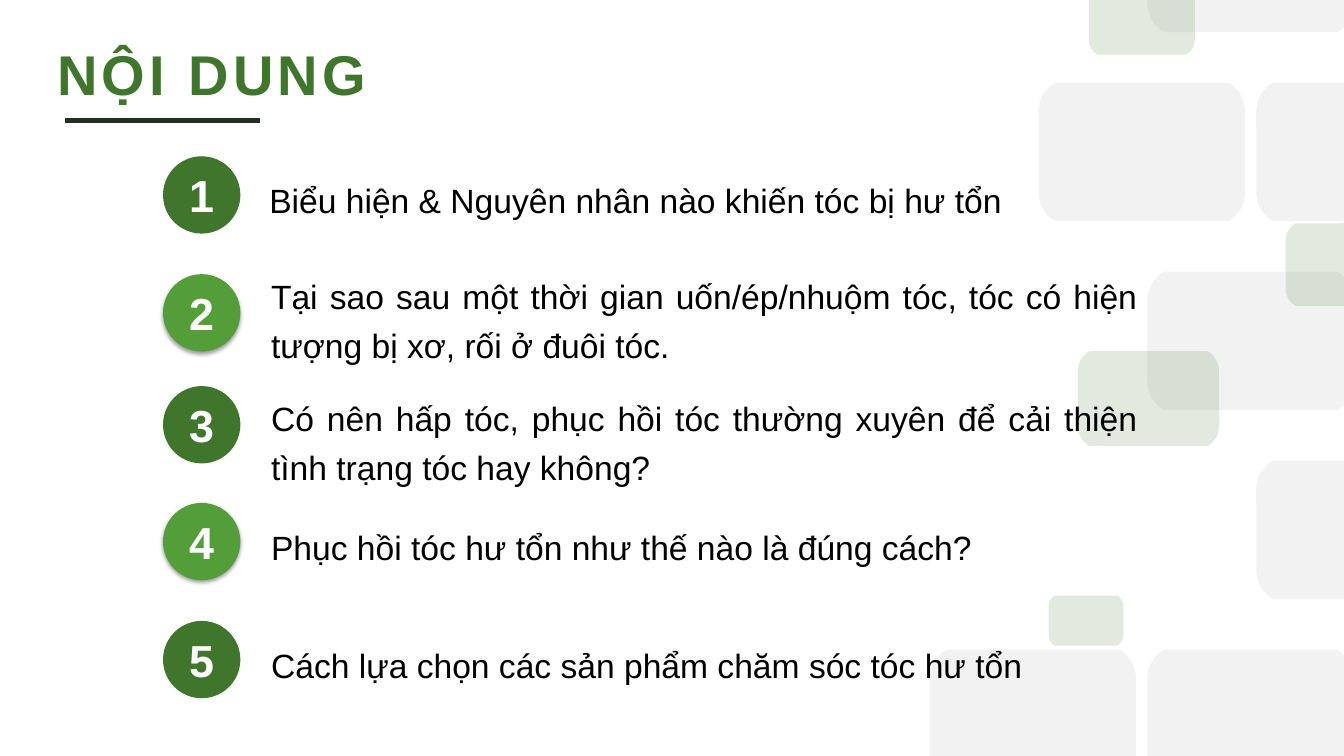
import math

import pptx
import pptx.util
import pptx.dml.color
import pptx.enum.shapes
import pptx.enum.text
import pptx.oxml
import pptx.oxml.ns
from lxml import etree

COLORS = {"dark": "3F762B", "light": "549E39", "rule": "223028",
          "pale": "F2F2F2", "white": "FFFFFF", "black": "000000"}
RGB = {name: pptx.dml.color.RGBColor.from_string(c) for name, c in COLORS.items()}
qn = pptx.oxml.ns.qn

prs = pptx.Presentation()
prs.slide_width = pptx.util.Inches(13.33)
prs.slide_height = pptx.util.Inches(7.5)
W, H = prs.slide_width / 100, prs.slide_height / 100  # one percent of the slide
s = prs.slides.add_slide(prs.slide_layouts[5])


def add_hexagon(cx, cy, width, color, opacity=100):
    """Rounded hexagon from a centre and width in percent, cut at top and bottom."""
    size = width * W
    left, right = cx * W - size / 2, cx * W + size / 2
    top = max(cy * H - 0.553 * size, 0)
    bottom = min(cy * H + 0.553 * size, 100 * H)
    builder = s.shapes.build_freeform(round(left), round(top))
    builder.add_line_segments([(round(right), round(top)), (round(right), round(bottom)),
                               (round(left), round(bottom))])
    sp = builder.convert_to_shape()
    outline = sp.element.spPr.find(".//" + qn("a:path"))
    for step in list(outline):
        outline.remove(step)

    # One Bezier corner, turned six times; corners beyond the edge become straight cuts
    corner = [(0.5, -0.195), (0.5, -0.255), (0.471, -0.306), (0.419, -0.336)]
    steps = []
    for side in range(6):
        a = -math.radians(60 * side)
        turned = [(cx * W + size * (x * math.cos(a) - y * math.sin(a)),
                   cy * H + size * (x * math.sin(a) + y * math.cos(a))) for x, y in corner]
        if all(top <= y <= bottom for x, y in turned):
            steps += [("lnTo", turned[:1]), ("cubicBezTo", turned[1:])]
        elif side not in (1, 4):
            edge = top if side < 3 else bottom
            steps.append(("lnTo", [(right if side in (0, 5) else left, edge)]))
    steps[0] = ("moveTo", steps[0][1])
    for tag, points in steps:
        step = etree.SubElement(outline, qn("a:" + tag))
        for x, y in points:
            etree.SubElement(step, qn("a:pt"), x=str(round(x - left)), y=str(round(y - top)))
    etree.SubElement(outline, qn("a:close"))

    sp.shadow.inherit = False
    sp.line.fill.background()
    sp.fill.solid()
    sp.fill.fore_color.rgb = RGB[color]
    if opacity < 100:
        clr = sp.element.spPr.find(qn("a:solidFill")).find(qn("a:srgbClr"))
        etree.SubElement(clr, qn("a:alpha"), val=str(opacity * 1000))


def write(sp, text, size, color, bold=False, align="LEFT", spacing=None):
    """Put one formatted run into a text shape that grows with its text."""
    tf = sp.text_frame
    tf.word_wrap = True
    tf.auto_size = pptx.enum.text.MSO_AUTO_SIZE.SHAPE_TO_FIT_TEXT
    tf.vertical_anchor = pptx.enum.text.MSO_ANCHOR.TOP
    p = tf.paragraphs[0]
    p.alignment = pptx.enum.text.PP_ALIGN[align]
    p.line_spacing = spacing
    r = p.add_run()
    r.text = text
    r.font.name = "Arial"
    r.font.size = pptx.util.Pt(size)
    r.font.bold = bold
    r.font.color.rgb = RGB[color]
    return r


# Honeycomb: grey cells on a staggered grid, green cells on top
for col, row in [(0, 4), (2, 4), (3, 1), (2, 0), (2, 2), (1, 1), (3, 3)]:
    add_hexagon(76.85 + 8.1 * col, 25 * row - 4.9, 15.35, "pale")
for cx, cy, width in [(100.23, 35, 9.15), (80.8, 82.1, 5.55),
                      (84.96, 2.53, 7.88), (85.45, 52.73, 10.5)]:
    add_hexagon(cx, cy, width, "dark", 15)

# Title and its rule
title = s.shapes.title
title.left, title.top = round(3.5 * W), round(4.53 * H)
title.width, title.height = round(64.74 * W), round(10.27 * H)
r = write(title, "NỘI DUNG", 40, "dark", True)
r.font._element.set("spc", "300")

rule = s.shapes.add_connector(pptx.enum.shapes.MSO_CONNECTOR.STRAIGHT, round(4.85 * W),
                              round(15.93 * H), round(19.35 * W), round(15.93 * H))
rule.line.color.rgb = RGB["rule"]
rule.line.width = pptx.util.Pt(3)
etree.SubElement(rule.element.spPr, qn("a:effectLst"))

# Agenda: circle top, text left, text top, text height, line spacing, text
agenda = [
    (20.67, 19.3, 23.2, 6.67, None, "Biểu hiện & Nguyên nhân nào khiến tóc bị hư tổn"),
    (36.27, 19.43, 34.8, 14.27, 1.2, "Tại sao sau một thời gian uốn/ép/nhuộm tóc, tóc có "
                                     "hiện tượng bị xơ, rối ở đuôi tóc."),
    (51.07, 19.43, 50.95, 14.27, 1.2, "Có nên hấp tóc, phục hồi tóc thường xuyên để cải "
                                      "thiện tình trạng tóc hay không?"),
    (66.53, 19.43, 67.47, 7.6, 1.3, "Phục hồi tóc hư tổn như thế nào là đúng cách?"),
    (82.13, 19.43, 83.07, 7.6, 1.3, "Cách lựa chọn các sản phẩm chăm sóc tóc hư tổn"),
]
diameter = round(5.76 * W)
for number, (circle_top, left, top, height, spacing, text) in enumerate(agenda, 1):
    # Circle, light and raised on even rows
    raised = number % 2 == 0
    sp = s.shapes.add_shape(pptx.enum.shapes.MSO_SHAPE.OVAL, round(12.13 * W),
                            round(circle_top * H), diameter, diameter)
    sp.shadow.inherit = False
    sp.line.fill.background()
    sp.fill.solid()
    sp.fill.fore_color.rgb = RGB["light" if raised else "dark"]
    if raised:
        shadow = etree.SubElement(sp.element.spPr.find(qn("a:effectLst")), qn("a:outerShdw"),
                                  blurRad=str(pptx.util.Pt(3.1)), dist=str(pptx.util.Pt(1.6)),
                                  dir="5400000", rotWithShape="0")
        clr = etree.SubElement(shadow, qn("a:srgbClr"), val=COLORS["black"])
        etree.SubElement(clr, qn("a:alpha"), val="38000")

    # Number and topic
    tb = s.shapes.add_textbox(round(13.35 * W), round((circle_top + 0.9) * H),
                              round(4.13 * W), round(8.53 * H))
    write(tb, str(number), 32, "white", True)
    tb = s.shapes.add_textbox(round(left * W), round(top * H),
                              round(65.94 * W), round(height * H))
    write(tb, text, 24, "black", align="JUSTIFY", spacing=spacing)

prs.save("out.pptx")
